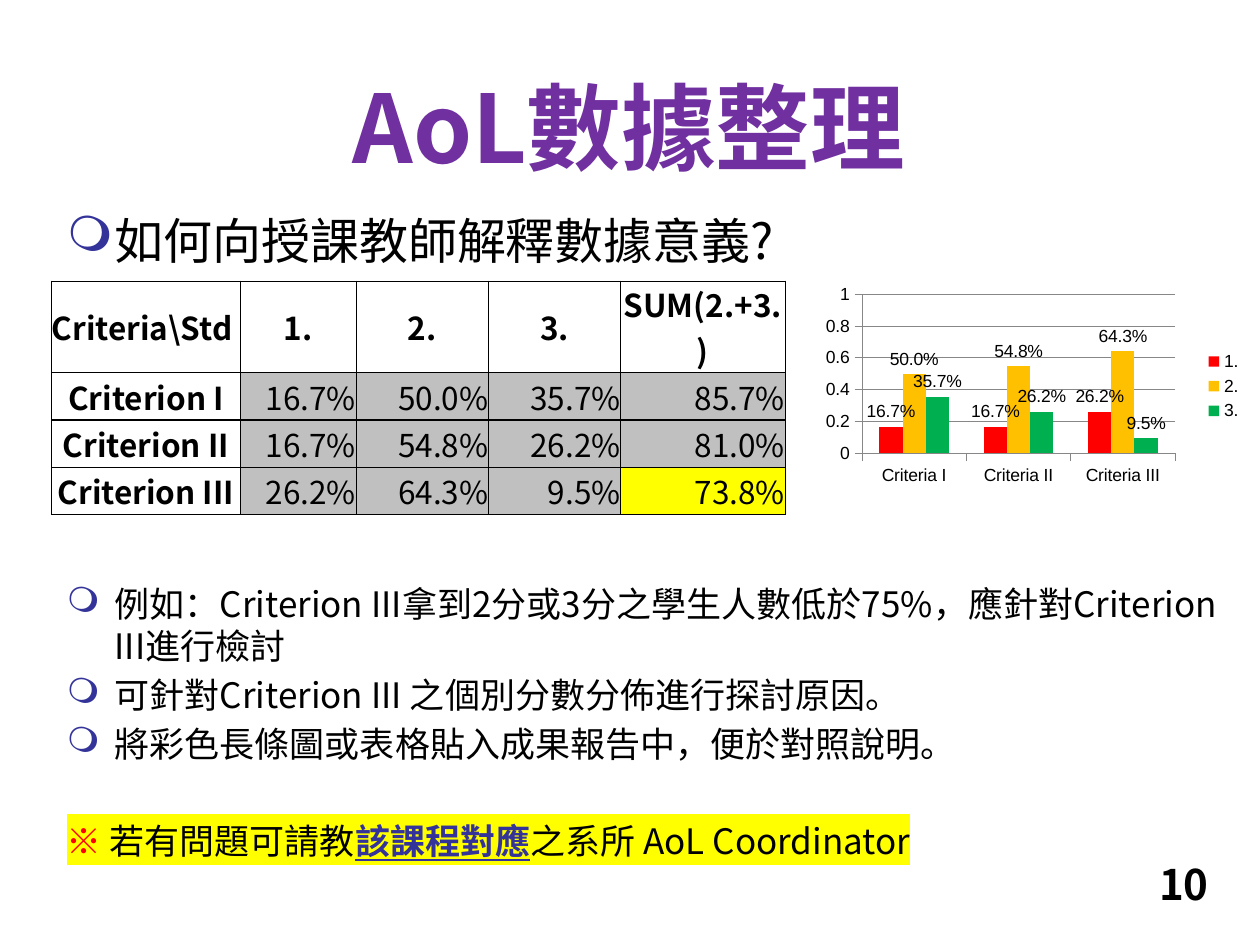
from lxml.etree import SubElement
from pptx import Presentation
from pptx.chart.data import CategoryChartData
from pptx.dml.color import RGBColor
from pptx.enum.chart import XL_CHART_TYPE as ChartType, XL_LABEL_POSITION as LabelPosition
from pptx.enum.chart import XL_LEGEND_POSITION as LegendPosition, XL_TICK_MARK as TickMark
from pptx.enum.text import MSO_ANCHOR as Anchor, PP_ALIGN as Align
from pptx.oxml.ns import qn
from pptx.util import Pt

BLACK = RGBColor(0x00, 0x00, 0x00)
PURPLE = RGBColor(0x70, 0x30, 0xA0)
INDIGO = RGBColor(0x33, 0x33, 0x99)
RED = RGBColor(0xFF, 0x00, 0x00)
AMBER = RGBColor(0xFF, 0xC0, 0x00)
GREEN = RGBColor(0x00, 0xB0, 0x50)
YELLOW = RGBColor(0xFF, 0xFF, 0x00)
SILVER = RGBColor(0xC0, 0xC0, 0xC0)
GRAY = RGBColor(0x87, 0x87, 0x87)
TEXT_FONT = "Noto Sans CJK TC"
CHART_FONT = "Arial"
BULLET_FONT = "Wingdings"

TABLE_ROWS = [
    ["Criteria\\Std", "1.", "2.", "3.", "SUM(2.+3.)"],
    ["Criterion I", "16.7%", "50.0%", "35.7%", "85.7%"],
    ["Criterion II", "16.7%", "54.8%", "26.2%", "81.0%"],
    ["Criterion III", "26.2%", "64.3%", "9.5%", "73.8%"],
]
COLUMN_WIDTHS = [107.8, 66.2, 75.6, 75.6, 94]
SERIES = [
    ("1.", [0.167, 0.167, 0.262], RED),
    ("2.", [0.5, 0.548, 0.643], AMBER),
    ("3.", [0.357, 0.262, 0.095], GREEN),
]
BULLETS = [
    ("如何向授課教師解釋數據意義?", 28, 0),
    ("例如：Criterion III拿到2分或3分之學生人數低於75%，應針對Criterion III進行檢討", 20, 179.3),
    ("可針對Criterion III 之個別分數分佈進行探討原因。", 20, 4),
    ("將彩色長條圖或表格貼入成果報告中，便於對照說明。", 20, 4),
]
NOTE_RUNS = [
    ("※", RED, True, False),
    (" 若有問題可請教", BLACK, False, False),
    ("該課程對應", INDIGO, True, True),
    ("之系所 AoL Coordinator", BLACK, False, False),
]


def add_run(paragraph, text, size, color=BLACK, bold=False, underline=False, highlight=None):
    run = paragraph.add_run()
    run.text = text
    font = run.font
    font.size, font.bold, font.underline = Pt(size), bold, underline
    font.color.rgb = color
    font.name = TEXT_FONT
    properties = run._r.get_or_add_rPr()
    SubElement(properties, qn("a:ea"), typeface=TEXT_FONT)
    if highlight is not None:
        marker = SubElement(properties, qn("a:highlight"))
        SubElement(marker, qn("a:srgbClr"), val=str(highlight))
        properties.find(qn("a:solidFill")).addnext(marker)


def add_text_frame(slide, box, anchor):
    frame = slide.shapes.add_textbox(*map(Pt, box)).text_frame
    frame.word_wrap = True
    frame.vertical_anchor = anchor
    return frame


def add_single_line(slide, box, text, size, color, anchor, alignment):
    paragraph = add_text_frame(slide, box, anchor).paragraphs[0]
    paragraph.alignment = alignment
    add_run(paragraph, text, size, color, bold=True)


def add_bullet(paragraph):
    properties = paragraph._p.get_or_add_pPr()
    properties.set("marL", str(Pt(27.4)))
    properties.set("indent", str(-Pt(27.4)))
    color = SubElement(properties, qn("a:buClr"))
    SubElement(color, qn("a:srgbClr"), val=str(INDIGO))
    SubElement(properties, qn("a:buFont"), typeface=BULLET_FONT, pitchFamily="2", charset="2")
    SubElement(properties, qn("a:buChar"), char="m")


def add_body(slide, box):
    frame = add_text_frame(slide, box, Anchor.TOP)
    paragraph = frame.paragraphs[0]
    for text, size, space_before in BULLETS:
        add_bullet(paragraph)
        paragraph.space_before = Pt(space_before)
        add_run(paragraph, text, size)
        paragraph = frame.add_paragraph()
    paragraph.space_before = Pt(31.4)
    for text, color, bold, underline in NOTE_RUNS:
        add_run(paragraph, text, 20, color, bold, underline, YELLOW)


def add_borders(cell):
    properties = cell._tc.get_or_add_tcPr()
    for position, side in enumerate(("a:lnL", "a:lnR", "a:lnT", "a:lnB")):
        line = SubElement(properties, qn(side), w=str(Pt(0.75)))
        fill = SubElement(line, qn("a:solidFill"))
        SubElement(fill, qn("a:srgbClr"), val=str(BLACK))
        properties.insert(position, line)


def add_score_table(slide, box):
    frame = slide.shapes.add_table(len(TABLE_ROWS), len(COLUMN_WIDTHS), *map(Pt, box))
    table = frame.table
    table.first_row = table.horz_banding = False
    for column, width in zip(table.columns, COLUMN_WIDTHS):
        column.width = Pt(width)
    for row_index, values in enumerate(TABLE_ROWS):
        table.rows[row_index].height = Pt(27 if row_index else 52.4)
        for column_index, value in enumerate(values):
            cell = table.cell(row_index, column_index)
            cell.margin_left = cell.margin_right = cell.margin_top = cell.margin_bottom = 0
            cell.vertical_anchor = Anchor.MIDDLE
            is_score = row_index > 0 and column_index > 0
            if is_score:
                cell.fill.solid()
                cell.fill.fore_color.rgb = YELLOW if value == "73.8%" else SILVER
            else:
                cell.fill.background()
            add_borders(cell)
            paragraph = cell.text_frame.paragraphs[0]
            if is_score:
                paragraph.alignment = Align.RIGHT
            elif row_index or column_index:
                paragraph.alignment = Align.CENTER
            else:
                paragraph.alignment = Align.LEFT
            add_run(paragraph, value, 18, bold=not is_score)


def set_plot_layout(chart, left, top, width, height):
    plot_area = chart._chartSpace.chart.plotArea
    layout = plot_area.find(qn("c:layout"))
    if layout is None:
        layout = SubElement(plot_area, qn("c:layout"))
        plot_area.insert(0, layout)
    manual = SubElement(layout, qn("c:manualLayout"))
    settings = {"layoutTarget": "inner", "xMode": "edge", "yMode": "edge",
                "x": left, "y": top, "w": width, "h": height}
    for name, value in settings.items():
        SubElement(manual, qn(f"c:{name}"), val=str(value))


def add_score_chart(slide, box):
    data = CategoryChartData()
    data.categories = ["Criteria I", "Criteria II", "Criteria III"]
    for name, values, _ in SERIES:
        data.add_series(name, values)
    chart = slide.shapes.add_chart(ChartType.COLUMN_CLUSTERED, *map(Pt, box), data).chart
    chart.has_title = False
    chart.font.name, chart.font.size = CHART_FONT, Pt(10)
    chart.font.color.rgb = BLACK
    chart.has_legend = True
    chart.legend.position = LegendPosition.RIGHT
    chart.legend.include_in_layout = False
    plot = chart.plots[0]
    plot.gap_width, plot.overlap, plot.vary_by_categories = 150, 0, False
    for series, (_, _, color) in zip(plot.series, SERIES):
        series.format.fill.solid()
        series.format.fill.fore_color.rgb = color
        labels = series.data_labels
        labels.show_value = True
        labels.number_format, labels.number_format_is_linked = "0.0%", False
        labels.position = LabelPosition.OUTSIDE_END
    value_axis = chart.value_axis
    value_axis.minimum_scale, value_axis.maximum_scale, value_axis.major_unit = 0, 1, 0.2
    value_axis.has_major_gridlines = True
    for axis in (value_axis, chart.category_axis):
        axis.major_tick_mark = TickMark.OUTSIDE
    for lines in (value_axis, chart.category_axis, value_axis.major_gridlines):
        lines.format.line.color.rgb = GRAY
        lines.format.line.width = Pt(0.5)
    set_plot_layout(chart, 0.16, 0.09, 0.67, 0.71)


def main():
    presentation = Presentation()
    presentation.slide_width, presentation.slide_height = Pt(720), Pt(540)
    slide = presentation.slides.add_slide(presentation.slide_layouts[6])
    add_single_line(slide, (530, 485.3, 167.8, 37.4), "10", 24, BLACK, Anchor.BOTTOM, Align.RIGHT)
    add_single_line(slide, (35.3, 26.6, 648, 90), "AoL數據整理", 54, PURPLE, Anchor.MIDDLE, Align.CENTER)
    add_body(slide, (31, 116.6, 689, 408.2))
    add_score_table(slide, (29.5, 160.6, 419.2, 133.4))
    add_score_chart(slide, (449.8, 156.6, 267.1, 128.2))
    presentation.save("out.pptx")


if __name__ == "__main__":
    main()
